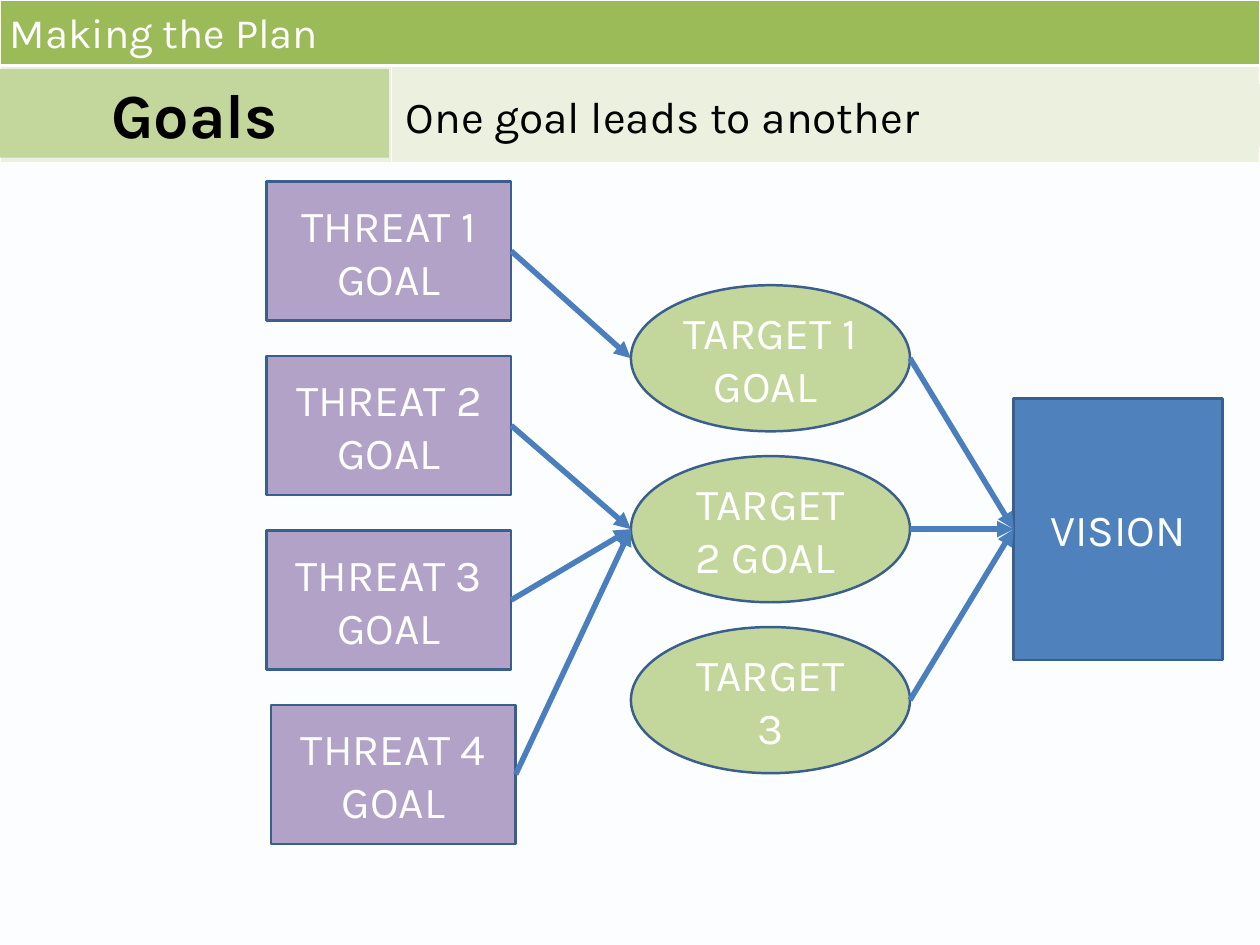
from lxml.etree import SubElement
from pptx import Presentation
from pptx.dml.color import RGBColor
from pptx.enum.shapes import MSO_CONNECTOR, MSO_SHAPE
from pptx.enum.text import MSO_ANCHOR, MSO_AUTO_SIZE, PP_ALIGN
from pptx.oxml.ns import qn
from pptx.util import Pt

PX = 9144
FONT = "Karla"
WHITE, BLACK = "FFFFFF", "000000"
GREEN, LIME, PALE = "9BBB59", "C3D69B", "EBF1DE"
BLUE, EDGE, ARROW, PURPLE = "4F81BD", "3A5F8C", "4B7EBC", "B3A2C7"


def paint(item, color):
    """Give a fill one solid colour."""
    item.solid()
    item.fore_color.rgb = RGBColor.from_string(color)


def place(shape, box):
    """Move a shape to a box of left, top, width and height in px."""
    shape.left, shape.top, shape.width, shape.height = (n * PX for n in box)


def write(shape, text, size, color, align=PP_ALIGN.CENTER, bold=False):
    """Set the one paragraph of a shape, centred top to bottom."""
    frame = shape.text_frame
    frame.word_wrap = True
    frame.auto_size = MSO_AUTO_SIZE.NONE
    frame.vertical_anchor = MSO_ANCHOR.MIDDLE
    para = frame.paragraphs[0]
    para.text = text
    para.alignment = align
    para.space_before = Pt(0)
    font = para.font
    font.name, font.size, font.bold = FONT, Pt(size), bold
    font.color.rgb = RGBColor.from_string(color)


def head(shape, box, text, size, color, fill=None, **style):
    """Place and fill one heading placeholder."""
    place(shape, box)
    if fill:
        paint(shape.fill, fill)
    write(shape, text, size, color, **style)
    frame = shape.text_frame
    frame.margin_left = frame.margin_right = 14 * PX
    frame.margin_top = frame.margin_bottom = 7 * PX


def edge(cell, base):
    """Draw white borders round a cell, with the given width at its base."""
    props = cell.fill._xPr
    for spot, (side, width) in enumerate(zip("LRTB", (1, 1, 1, base))):
        line = SubElement(props, qn(f"a:ln{side}"), w=str(Pt(width)))
        fill = SubElement(line, qn("a:solidFill"))
        SubElement(fill, qn("a:srgbClr"), val=WHITE)
        props.insert(spot, line)


def banner(slide, left, top, width):
    """Build the table bands and the three headings over them."""
    cols, rows = (442, width - 442), (74, 109)
    frame = slide.shapes.add_table(2, 2, left * PX, top * PX, width * PX, sum(rows) * PX)
    slide.shapes.element.insert(2, frame.element)
    table = frame.table
    for col, size in zip(table.columns, cols):
        col.width = size * PX
    for row, size, color, base in zip(table.rows, rows, (GREEN, PALE), (3, 1)):
        row.height = size * PX
        for cell in row.cells:
            paint(cell.fill, color)
            edge(cell, base)
    table.cell(0, 0).merge(table.cell(0, 1))

    parts = {p.placeholder_format.idx: p for p in slide.placeholders}
    head(parts[0], (left - 3, top, width, 72), "Making the Plan", 34, WHITE,
         align=PP_ALIGN.LEFT)
    head(parts[1], (left, top + 78, 439, 100), "Goals", 51, BLACK, LIME, bold=True)
    head(parts[3], (left + 444, top + 95, 979, 71), "One goal leads to another",
         36, BLACK, PALE, align=PP_ALIGN.LEFT)
    for idx in (2, 4):
        slide.shapes.element.remove(parts[idx].element)


def node(slide, kind, box, text, fill):
    """Add one labelled, outlined shape."""
    shape = slide.shapes.add_shape(kind, *(n * PX for n in box))
    shape.shadow.inherit = False
    paint(shape.fill, fill)
    paint(shape.line.fill, EDGE)
    shape.line.width = Pt(2)
    write(shape, text, 36, WHITE)
    return shape


def link(slide, start, end):
    """Draw an arrow from the right of one shape to the left of another."""
    line = slide.shapes.add_connector(
        MSO_CONNECTOR.STRAIGHT,
        start.left + start.width, start.top + start.height // 2,
        end.left, end.top + end.height // 2)
    if start.auto_shape_type == MSO_SHAPE.RECTANGLE:
        line.begin_connect(start, 3)
    if end.auto_shape_type == MSO_SHAPE.RECTANGLE:
        line.end_connect(end, 1)
    paint(line.line.fill, ARROW)
    line.line.width = Pt(4.5)
    SubElement(line.line._get_or_add_ln(), qn("a:tailEnd"), type="triangle")
    SubElement(line.element.spPr, qn("a:effectLst"))


def chain(slide, left, top):
    """Build the threats, targets and vision with their arrows."""
    vision = node(slide, MSO_SHAPE.RECTANGLE, (left + 843, top + 245, 236, 295),
                  "VISION", BLUE)
    names = ("TARGET 1 GOAL ", "TARGET 2 GOAL ", "TARGET 3")
    goals = [node(slide, MSO_SHAPE.OVAL, (left + 411, top + 117 + 193 * i, 315, 165),
                  name, LIME) for i, name in enumerate(names)]
    threats = [node(slide, MSO_SHAPE.RECTANGLE,
                    (left + shift, top + 197 * i, 276, 157),
                    f"THREAT {i + 1} GOAL", PURPLE)
               for i, shift in enumerate((0, 0, 0, 5))]
    for goal in goals:
        link(slide, goal, vision)
    for threat, goal in zip(threats, (0, 1, 1, 1)):
        link(slide, threat, goals[goal])


def main():
    """Build the slide and save it."""
    deck = Presentation()
    deck.slide_width, deck.slide_height = 1422 * PX, 1067 * PX
    slide = deck.slides.add_slide(deck.slide_layouts.get_by_name("Comparison"))
    paint(slide.background.fill, "FBFDFF")
    banner(slide, 0, 0, 1421)
    chain(slide, 301, 205)
    deck.save("out.pptx")


if __name__ == "__main__":
    main()
